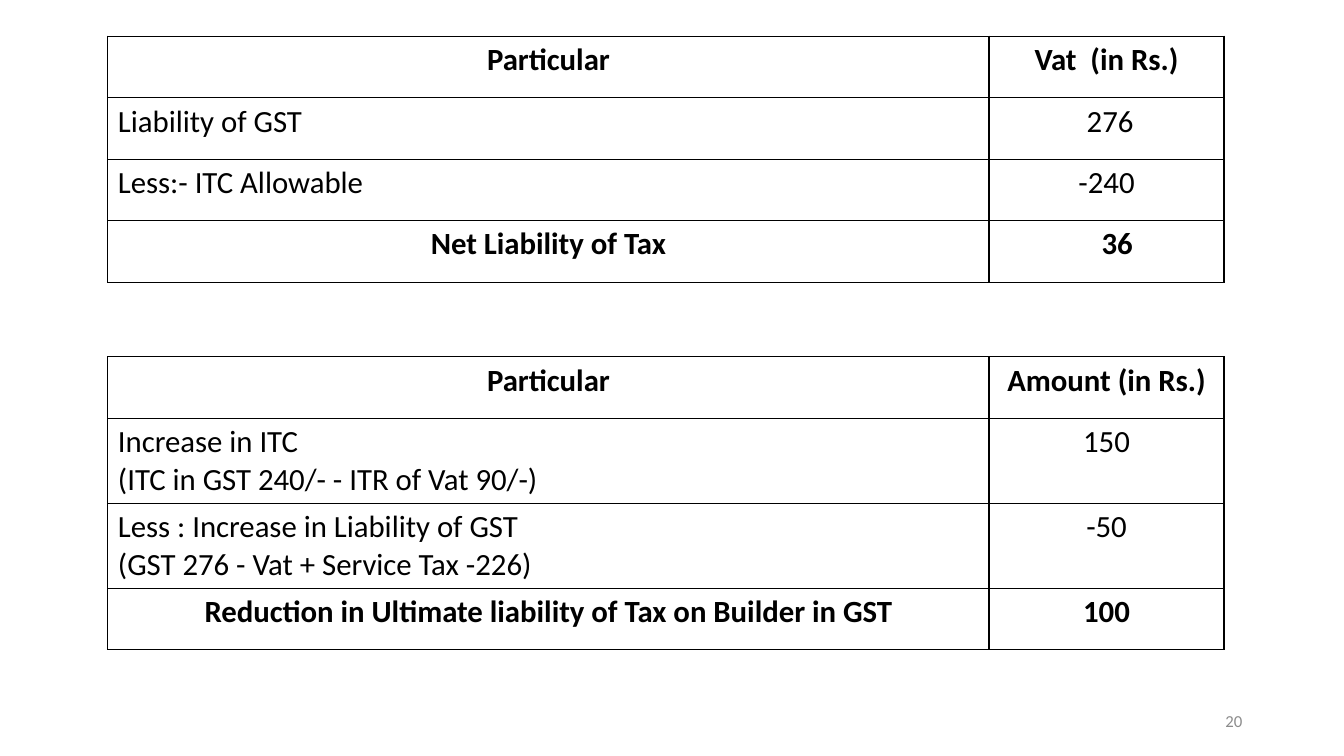
from lxml.etree import SubElement
from pptx import Presentation
from pptx.dml.color import RGBColor
from pptx.enum.text import MSO_ANCHOR, PP_ALIGN
from pptx.oxml.ns import qn
from pptx.util import Inches, Pt

BLACK = RGBColor(0x00, 0x00, 0x00)
GREY = RGBColor(0x8C, 0x8C, 0x8C)
FONT = "Calibri"
LEFT = 1.07
COLUMN_WIDTHS = (8.74, 2.33)
ROW_HEIGHT = 0.61
TWO_LINE_HEIGHT = 0.84
CELL_MARGIN = 0.1

# Each row: label lines, amount, extra left margin that nudges the amount
GST_LIABILITY = [
    (["Particular"], "Vat  (in Rs.)", 0),
    (["Liability of GST"], "276", 0.07),
    (["Less:- ITC Allowable"], "-240", 0),
    (["Net Liability of Tax"], "36", 0.21),
]
TAX_REDUCTION = [
    (["Particular"], "Amount (in Rs.)", 0),
    (["Increase in ITC", "(ITC in GST 240/- - ITR of Vat 90/-)"], "150", 0),
    (["Less : Increase in Liability of GST",
      "(GST 276 - Vat + Service Tax -226)"], "-50", 0),
    (["Reduction in Ultimate liability of Tax on Builder in GST"], "100", 0),
]


def add_line(paragraph, text, size, color, align, bold=False):
    paragraph.alignment = align
    run = paragraph.add_run()
    run.text = text
    run.font.name = FONT
    run.font.size = Pt(size)
    run.font.bold = bold
    run.font.color.rgb = color


def draw_borders(cell):
    properties = cell._tc.get_or_add_tcPr()
    for side in ("a:lnL", "a:lnR", "a:lnT", "a:lnB"):
        border = SubElement(properties, qn(side), w=str(Pt(1)))
        fill = SubElement(border, qn("a:solidFill"))
        SubElement(fill, qn("a:srgbClr"), val=str(BLACK))


def fill_cell(cell, lines, align, bold, nudge=0):
    draw_borders(cell)
    cell.fill.background()
    cell.margin_left = Inches(CELL_MARGIN + nudge)
    frame = cell.text_frame
    for index, line in enumerate(lines):
        paragraph = frame.add_paragraph() if index else frame.paragraphs[0]
        add_line(paragraph, line, 22, BLACK, align, bold)


def add_tax_table(slide, left, top, entries):
    """Add a two-column table whose first and last rows are bold and centred."""
    heights = [TWO_LINE_HEIGHT if len(labels) > 1 else ROW_HEIGHT
               for labels, _, _ in entries]
    table = slide.shapes.add_table(
        len(entries), len(COLUMN_WIDTHS), Inches(left), Inches(top),
        Inches(sum(COLUMN_WIDTHS)), Inches(sum(heights))).table
    table.first_row = False
    table.horz_banding = False
    for column, width in zip(table.columns, COLUMN_WIDTHS):
        column.width = Inches(width)
    for index, (labels, amount, nudge) in enumerate(entries):
        table.rows[index].height = Inches(heights[index])
        strong = index in (0, len(entries) - 1)
        label_align = PP_ALIGN.CENTER if strong else PP_ALIGN.LEFT
        fill_cell(table.cell(index, 0), labels, label_align, strong)
        fill_cell(table.cell(index, 1), [amount], PP_ALIGN.CENTER, strong, nudge)


def add_page_number(slide, left, top, width, height, number):
    frame = slide.shapes.add_textbox(
        Inches(left), Inches(top), Inches(width), Inches(height)).text_frame
    frame.word_wrap = True
    frame.vertical_anchor = MSO_ANCHOR.MIDDLE
    add_line(frame.paragraphs[0], number, 12, GREY, PP_ALIGN.RIGHT)


def main():
    deck = Presentation()
    deck.slide_width = Inches(13.33)
    deck.slide_height = Inches(7.5)
    slide = deck.slides.add_slide(deck.slide_layouts[6])
    add_tax_table(slide, LEFT, 0.36, GST_LIABILITY)
    add_tax_table(slide, LEFT, 3.54, TAX_REDUCTION)
    add_page_number(slide, 9.42, 6.95, 3, 0.4, "20")
    deck.save("out.pptx")


if __name__ == "__main__":
    main()
